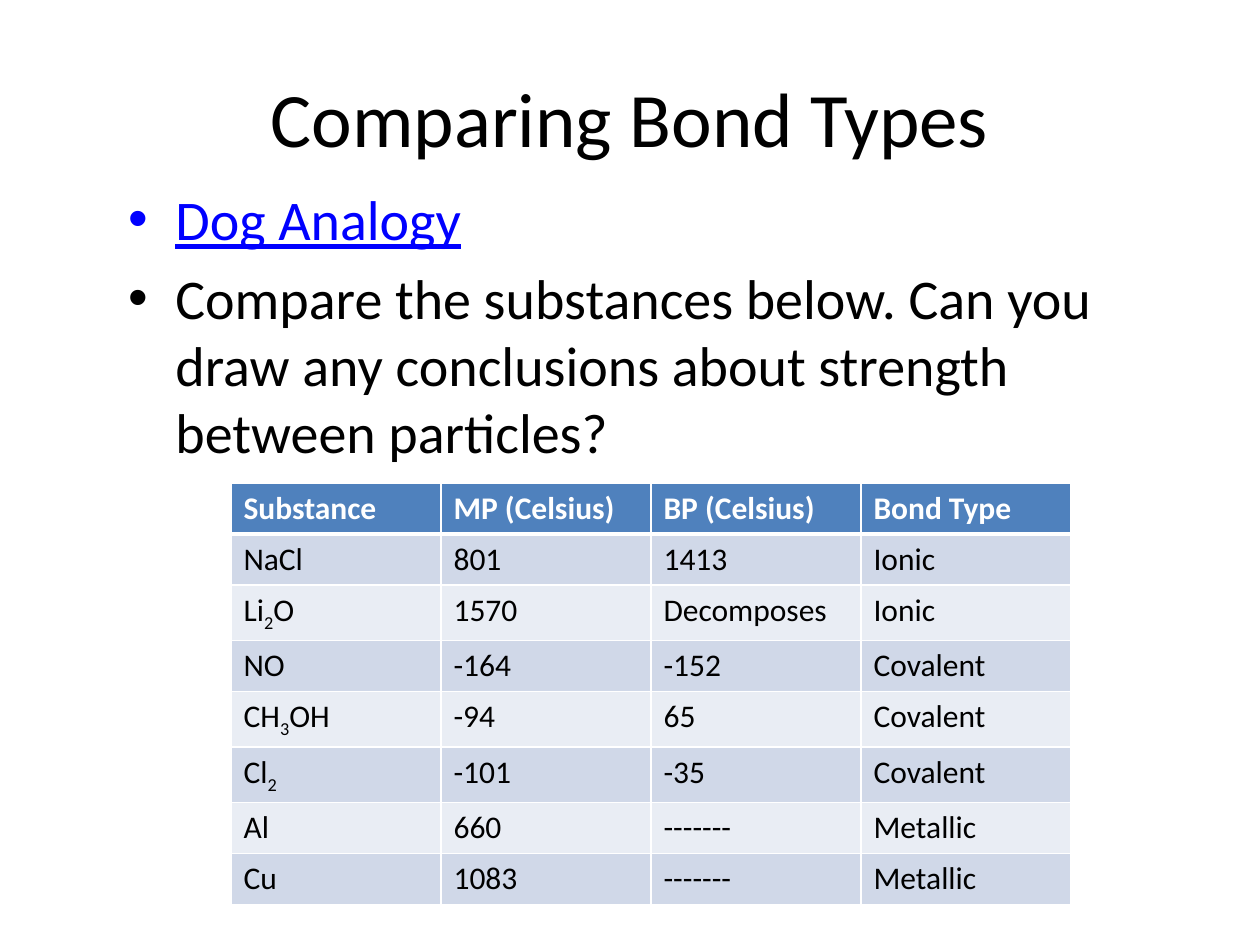
import pptx
import pptx.util
import pptx.dml.color
import pptx.oxml
import pptx.oxml.ns
from pptx.util import Pt

FONT = "Calibri"
TITLE = "Comparing Bond Types"
# Text, colour, underlined
BULLETS = [
    ("Dog Analogy", "0000FF", True),
    ("Compare the substances below. Can you draw any conclusions "
     "about strength between particles?", "000000", False),
]
# Subscripts stand between underscores
ROWS = [
    ("Substance", "MP (Celsius)", "BP (Celsius)", "Bond Type"),
    ("NaCl", "801", "1413", "Ionic"),
    ("Li_2_O", "1570", "Decomposes", "Ionic"),
    ("NO", "-164", "-152", "Covalent"),
    ("CH_3_OH", "-94", "65", "Covalent"),
    ("Cl_2", "-101", "-35", "Covalent"),
    ("Al", "660", "-------", "Metallic"),
    ("Cu", "1083", "-------", "Metallic"),
]
HEADER_FILL, BAND_FILLS = "4F81BD", ("E9EDF4", "D0D8E8")
COL_W, ROW_H = 120, 29.2


def rgb(value):
    return pptx.dml.color.RGBColor.from_string(value)


def style(r, size, color, bold=False, underline=False):
    r.font.name, r.font.size = FONT, Pt(size)
    r.font.color.rgb = rgb(color)
    r.font.bold, r.font.underline = bold, underline


def place(shape, left, top, width, height):
    shape.left, shape.top = Pt(left), Pt(top)
    shape.width, shape.height = Pt(width), Pt(height)


def add_borders(cell, widths):
    tcPr = cell._tc.get_or_add_tcPr()
    for side, width in widths.items():
        tcPr.append(pptx.oxml.parse_xml(
            f'<a:ln{side} {pptx.oxml.ns.nsdecls("a")} w="{Pt(width)}">'
            '<a:solidFill><a:srgbClr val="FFFFFF"/></a:solidFill>'
            f'</a:ln{side}>'))


def fill_cell(cell, text, row):
    header = row == 0
    add_borders(cell, {"L": 1, "R": 1, "T": 3 if row == 1 else 1,
                       "B": 3 if header else 1})
    cell.fill.solid()
    cell.fill.fore_color.rgb = rgb(HEADER_FILL if header else BAND_FILLS[row % 2])
    p = cell.text_frame.paragraphs[0]
    for i, part in enumerate(text.split("_")):
        r = p.add_run()
        r.text = part
        style(r, 18, "FFFFFF" if header else "000000", bold=header)
        if i % 2:
            r.font._element.set("baseline", "-25000")


prs = pptx.Presentation()
prs.slide_width, prs.slide_height = Pt(720), Pt(540)
s = prs.slides.add_slide(prs.slide_layouts[1])

# Title
title = s.shapes.title
place(title, 36, 21.6, 648, 90)
title.text_frame.text = TITLE
style(title.text_frame.paragraphs[0].runs[0], 44, "000000")

# Bullets
body = s.placeholders[1]
place(body, 66, 102, 612, 360)
tf = body.text_frame
tf.text = "\n".join(text for text, _, _ in BULLETS)
for p, (_, color, underline) in zip(tf.paragraphs, BULLETS):
    style(p.runs[0], 32, color, underline=underline)

# Substance table
table = s.shapes.add_table(len(ROWS), len(ROWS[0]), Pt(132), Pt(276),
                           Pt(COL_W * len(ROWS[0])), Pt(ROW_H * len(ROWS))).table
for column in table.columns:
    column.width = Pt(COL_W)
for i, values in enumerate(ROWS):
    table.rows[i].height = Pt(ROW_H)
    for j, text in enumerate(values):
        fill_cell(table.cell(i, j), text, i)

prs.save("out.pptx")
